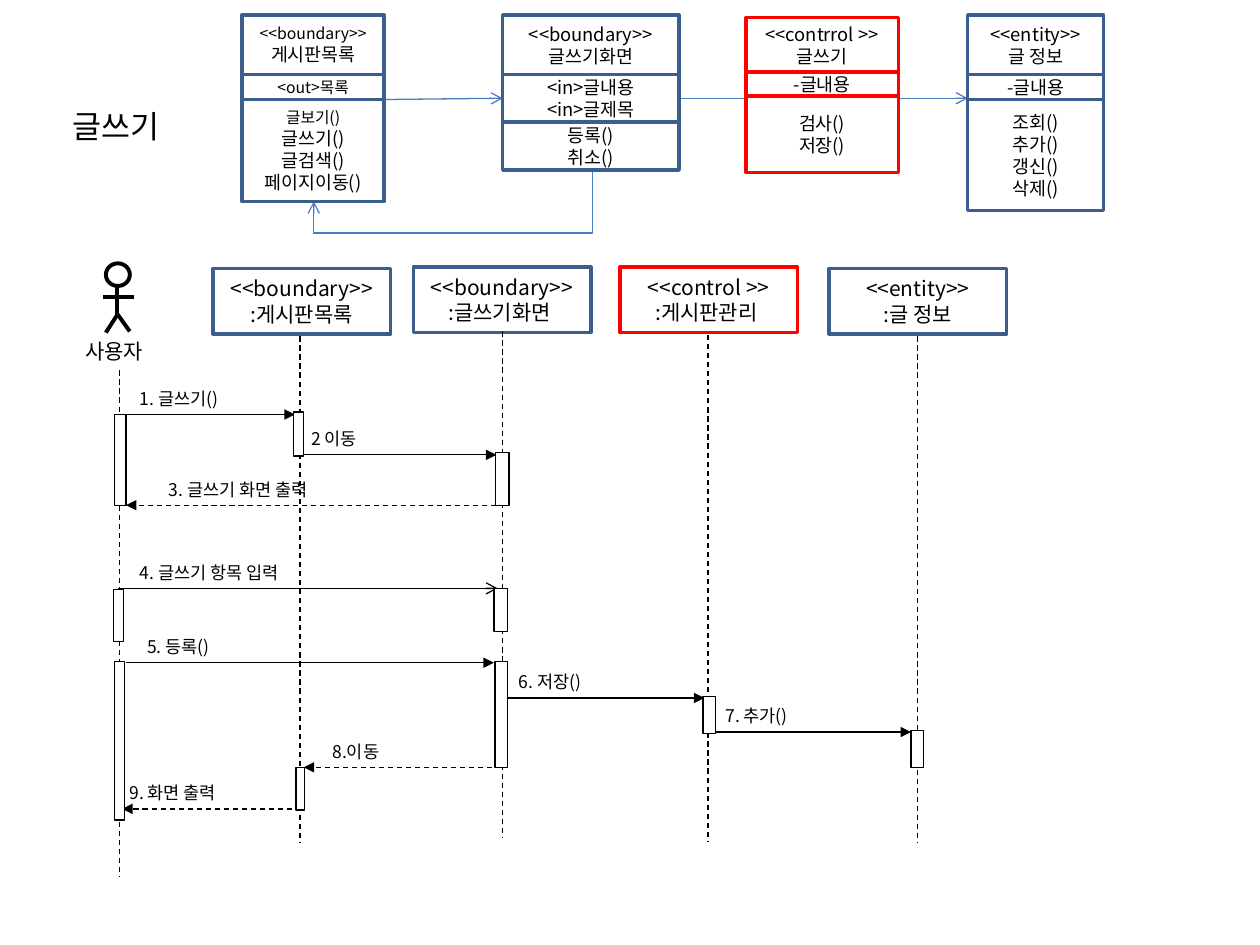
"""Build a slide with a class diagram and a sequence diagram for writing a board post."""
from pptx import Presentation
from pptx import util as u
from pptx.dml.color import RGBColor
from pptx.enum import dml, shapes, text
from pptx.oxml import ns
from lxml import etree


class Theme:
    font = "Noto Sans CJK KR"
    black, white, navy, red, blue = "000000", "FFFFFF", "3A5F8C", "FF0000", "4B7EBC"
    title, head, body, label, small = 18, 12, 10.5, 10, 9
    border, figure, thin = 2, 2.25, 0.75
    leading = 1.2


def add_block(s, x, y, w, h, content="", kind=None, line=None, fill=None, weight=Theme.thin,
              size=Theme.body, first=None, align=text.PP_ALIGN.LEFT,
              anchor=text.MSO_ANCHOR.TOP, wrap=True):
    box = [u.Inches(v) for v in (x, y, w, h)]
    if kind is None:
        sp = s.shapes.add_textbox(*box)
    else:
        sp = s.shapes.add_shape(kind, *box)
        sp.shadow.inherit = False
        sp.line.color.rgb = RGBColor.from_string(line)
        sp.line.width = u.Pt(weight)
        if fill:
            sp.fill.solid()
            sp.fill.fore_color.rgb = RGBColor.from_string(fill)
        else:
            sp.fill.background()
    tf = sp.text_frame
    tf.word_wrap = wrap
    tf.vertical_anchor = anchor
    for i, words in enumerate(content.split("\n") if content else []):
        p = tf.paragraphs[0] if i == 0 else tf.add_paragraph()
        points = first if first and i == 0 else size
        p.alignment = align
        p.line_spacing = u.Pt(points * Theme.leading)
        r = p.add_run()
        r.text = words
        r.font.size = u.Pt(points)
        r.font.name = Theme.font
        r.font.color.rgb = RGBColor.from_string(Theme.black)
        ea = etree.SubElement(r.font._element, ns.qn("a:ea"))
        ea.set("typeface", Theme.font)
    return sp


def add_line(s, x1, y1, x2, y2, color=Theme.black, weight=Theme.thin, dash=False, arrow=None,
             kind=shapes.MSO_CONNECTOR.STRAIGHT):
    c = s.shapes.add_connector(kind, *[u.Inches(v) for v in (x1, y1, x2, y2)])
    c.line.color.rgb = RGBColor.from_string(color)
    c.line.width = u.Pt(weight)
    if dash:
        c.line.dash_style = dml.MSO_LINE.DASH
    props = c.element.spPr
    if arrow:
        etree.SubElement(props.find(ns.qn("a:ln")), ns.qn("a:tailEnd")).set("type", arrow)
    etree.SubElement(props, ns.qn("a:effectLst"))
    return c


RECT = shapes.MSO_SHAPE.RECTANGLE
CENTERED = dict(align=text.PP_ALIGN.CENTER, anchor=text.MSO_ANCHOR.MIDDLE)

prs = Presentation()
prs.slide_width, prs.slide_height = u.Inches(10), u.Inches(7.5)
s = prs.slides.add_slide(prs.slide_layouts[6])

add_block(s, 0.48, 0.8, 1.05, 0.4, "글쓰기", size=Theme.title)

to_form = add_line(s, 3.05, 0.79, 3.99, 0.78, Theme.blue, arrow="arrow")
to_entity = add_line(s, 5.39, 0.78, 7.68, 0.78, Theme.blue, arrow="arrow")
back = add_line(s, 3.47, 0.37, 3.72, 2.58, Theme.blue, arrow="arrow",
                kind=shapes.MSO_CONNECTOR.ELBOW)
back.element.spPr.find(ns.qn("a:xfrm")).set("rot", str(90 * 60000))
guides = back.element.spPr.find(ns.qn("a:prstGeom")).get_or_add_avLst()
guide = etree.SubElement(guides, ns.qn("a:gd"))
guide.set("name", "adj1")
guide.set("fmla", "val 200000")

classes = [
    (1.92, 0.12, 1.13, Theme.navy, None, Theme.small, [
        (0.47, "<<boundary>>\n게시판목록"), (0.2, "<out>목록"),
        (0.81, "글보기()\n글쓰기()\n글검색()\n페이지이동()")]),
    (3.99, 0.12, 1.4, Theme.navy, None, None, [
        (0.47, "<<boundary>>\n글쓰기화면"), (0.38, "<in>글내용\n<in>글제목"),
        (0.38, "등록()\n취소()")]),
    (7.68, 0.12, 1.08, Theme.navy, None, None, [
        (0.47, "<<entity>>\n글 정보"), (0.2, "-글내용"),
        (0.88, "조회()\n추가()\n갱신()\n삭제()")]),
    (5.92, 0.14, 1.21, Theme.red, Theme.white, None, [
        (0.43, "<<contrrol >>\n글쓰기"), (0.19, "-글내용"), (0.61, "검사()\n저장()")]),
]
parts = {}
for x, y, w, color, fill, first, rows in classes:
    for h, content in rows:
        parts[content] = add_block(s, x, y, w, h, content, RECT, color, fill, Theme.border,
                                   first=first, **CENTERED)
        y += h
form_fields = parts["<in>글내용\n<in>글제목"]
to_form.end_connect(form_fields, 1)
to_entity.begin_connect(form_fields, 3)

add_block(s, 0.84, 2.09, 0.19, 0.18, kind=shapes.MSO_SHAPE.OVAL, line=Theme.black,
          weight=Theme.figure)
for limb in [(0.82, 2.36, 1.06, 2.36), (0.93, 2.27, 0.93, 2.5),
             (0.93, 2.5, 0.84, 2.64), (0.93, 2.49, 1.03, 2.63)]:
    add_line(s, *limb, weight=Theme.figure)
add_block(s, 0.58, 2.64, 1.1, 0.3, "사용자", size=Theme.head)

participants = [
    (1.69, 2.13, Theme.navy, "<<boundary>>\n:게시판목록"),
    (3.28, 2.12, Theme.navy, "<<boundary>>\n:글쓰기화면 "),
    (4.92, 2.12, Theme.red, "<<control >>\n:게시판관리 "),
    (6.58, 2.13, Theme.navy, "<<entity>>\n:글 정보"),
]
for x, y, color, content in participants:
    add_block(s, x, y, 1.41, 0.52, content, RECT, color, weight=Theme.border,
              size=Theme.head, **CENTERED)

for x, top in [(0.95, 2.94), (2.38, 2.67), (3.99, 2.63), (5.62, 2.66), (7.28, 2.67)]:
    add_line(s, x, top, x, top + 4.02, dash=True)

messages = [
    (0.98, 2.34, 3.29, 1.01, 0.91, "1. 글쓰기()"),
    (2.33, 3.94, 3.61, 2.37, 0.61, "2 이동"),
    (3.94, 1, 4.01, 1.24, 1.45, "3. 글쓰기 화면 출력"),
    (0.94, 3.95, 4.67, 1.01, 1.45, "4. 글쓰기 항목 입력"),
    (1, 3.92, 5.26, 1.07, 0.76, "5. 등록()"),
    (3.99, 5.59, 5.54, 4.02, 0.76, "6. 저장()"),
    (5.62, 7.23, 5.81, 5.66, 0.76, "7. 추가()"),
    (3.98, 2.41, 6.09, 2.54, 0.61, "8.이동"),
    (2.39, 0.97, 6.42, 0.93, 1.76, "9. 화면 출력"),
]
for start, end, y, x, w, content in messages:
    add_line(s, start, y, end, y, dash=end < start,
             arrow="arrow" if content.startswith("4") else "triangle")
    add_block(s, x, y - 0.26, w, 0.27, content, size=Theme.label, wrap=w > 1.5)

activations = [
    (0.91, 3.29, 0.09, 0.72), (0.9, 4.68, 0.08, 0.41), (0.91, 5.25, 0.08, 1.26),
    (2.33, 3.27, 0.08, 0.35), (2.35, 6.09, 0.07, 0.34),
    (3.93, 3.59, 0.11, 0.42), (3.92, 4.67, 0.11, 0.34), (3.93, 5.25, 0.1, 0.84),
    (5.58, 5.53, 0.1, 0.29), (7.23, 5.8, 0.1, 0.29),
]
for bar in activations:
    add_block(s, *bar, kind=RECT, line=Theme.black, fill=Theme.white)

prs.save("out.pptx")
